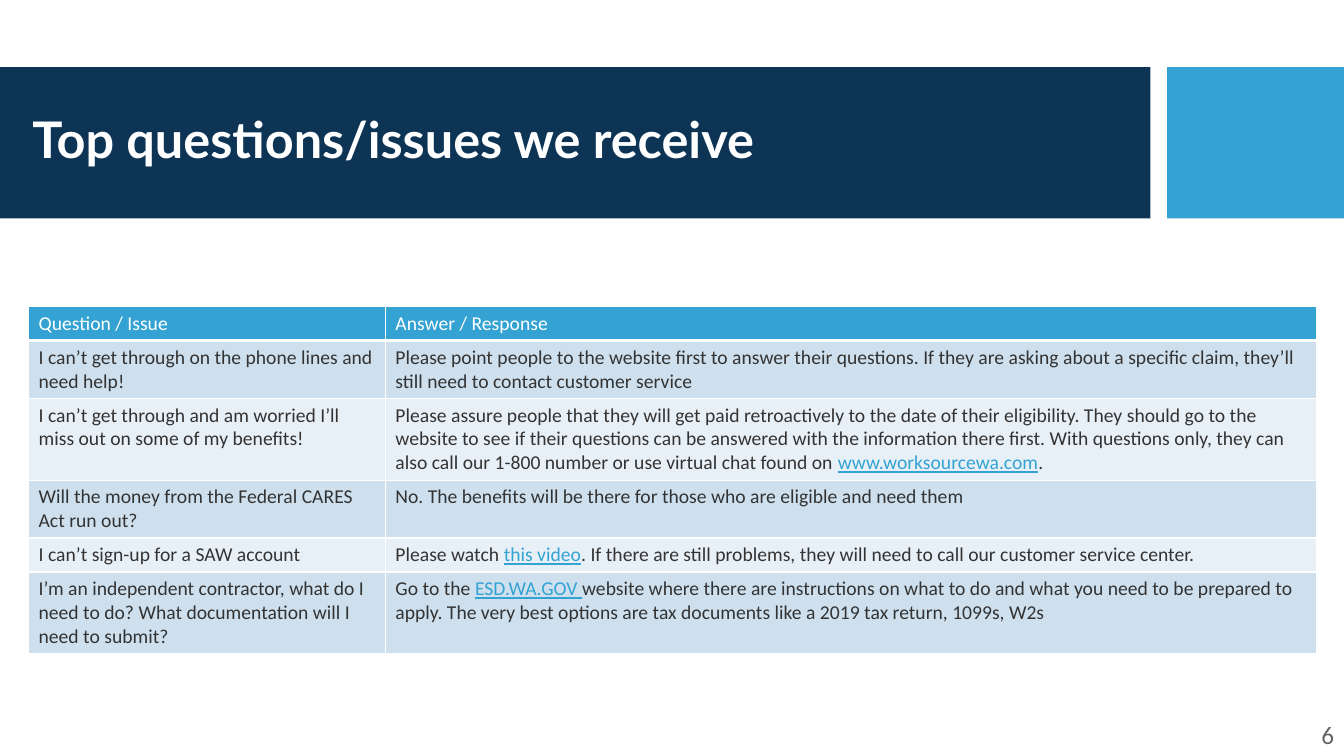
from lxml.etree import SubElement
from pptx import Presentation
from pptx.dml.color import RGBColor
from pptx.enum.shapes import MSO_SHAPE as Shape
from pptx.enum.text import MSO_ANCHOR as Anchor, PP_ALIGN as Align
from pptx.oxml.ns import qn
from pptx.util import Pt

NAVY = RGBColor(0x0D, 0x34, 0x55)
BLUE = RGBColor(0x34, 0xA2, 0xD2)
LINK = RGBColor(0x32, 0xA3, 0xD3)
BAND_DARK = RGBColor(0xCE, 0xE0, 0xEE)
BAND_LIGHT = RGBColor(0xE8, 0xF0, 0xF7)
INK = RGBColor(0x33, 0x33, 0x33)
GREY = RGBColor(0x66, 0x66, 0x66)
WHITE = RGBColor(0xFF, 0xFF, 0xFF)

COLUMN_WIDTHS = (254.9, 665.2)
ROW_HEIGHTS = (24.3, 41.3, 58.4, 41.3, 24.3, 58.4)
LINKED = ("www.worksourcewa.com", "this video", "ESD.WA.GOV ")
ROWS = (
    (("Question / Issue",), ("Answer / Response",)),
    (("I can’t get through on the phone lines and need help!",),
     ("Please point people to the website first to answer their questions. If they are "
      "asking about a specific claim, they’ll still need to contact customer service",)),
    (("I can’t get through and am worried I’ll miss out on some of my benefits!",),
     ("Please assure people that they will get paid retroactively to the date of their "
      "eligibility. They should go to the website to see if their questions can be answered "
      "with the information there first. With questions only, they can also call our 1-800 "
      "number or use virtual chat found on ", "www.worksourcewa.com", ".")),
    (("Will the money from the Federal CARES Act run out?",),
     ("No. The benefits will be there for those who are eligible and need them",)),
    (("I can’t sign-up for a SAW account",),
     ("Please watch ", "this video", ". If there are still problems, they will need to call "
      "our customer service center.")),
    (("I’m an independent contractor, what do I need to do? What documentation will I need "
      "to submit?",),
     ("Go to the ", "ESD.WA.GOV ", "website where there are instructions on what to do and "
      "what you need to be prepared to apply. The very best options are tax documents like a "
      "2019 tax return, 1099s, W2s")),
)


class PageBuilder:
    heading_font = "Lato"
    body_font = "Calibri"

    def __init__(self, deck):
        self.page = deck.slides.add_slide(deck.slide_layouts[5])

    def style(self, span, font, size, color, bold=False):
        span.font.name = font
        span.font.size = Pt(size)
        span.font.color.rgb = color
        span.font.bold = bold

    def block(self, left, top, width, height, color):
        shape = self.page.shapes.add_shape(
            Shape.RECTANGLE, Pt(left), Pt(top), Pt(width), Pt(height))
        shape.shadow.inherit = False
        shape.fill.solid()
        shape.fill.fore_color.rgb = color
        shape.line.fill.background()

    def title(self, text, left, top, width, height):
        box = self.page.shapes.title
        box.left, box.top, box.width, box.height = Pt(left), Pt(top), Pt(width), Pt(height)
        self.page.shapes._spTree.append(box._element)
        frame = box.text_frame
        frame.text = text
        frame.vertical_anchor = Anchor.MIDDLE
        para = frame.paragraphs[0]
        para.alignment = Align.LEFT
        para.line_spacing = 0.9
        self.style(para.runs[0], self.heading_font, 36, WHITE, bold=True)

    def page_number(self, text, left, top, width, height):
        box = self.page.shapes.add_textbox(Pt(left), Pt(top), Pt(width), Pt(height))
        box.text_frame.word_wrap = True
        box.text_frame.text = text
        para = box.text_frame.paragraphs[0]
        para.alignment = Align.RIGHT
        self.style(para.runs[0], self.body_font, 18, GREY)

    def borders(self, cell, bottom):
        properties = cell._tc.get_or_add_tcPr()
        for side, width in (("L", 1), ("R", 1), ("T", 1), ("B", bottom)):
            line = SubElement(properties, qn(f"a:ln{side}"), w=str(Pt(width)))
            fill = SubElement(line, qn("a:solidFill"))
            SubElement(fill, qn("a:srgbClr"), val=str(WHITE))

    def cell(self, cell, parts, fill, color, bottom):
        self.borders(cell, bottom)
        cell.fill.solid()
        cell.fill.fore_color.rgb = fill
        para = cell.text_frame.paragraphs[0]
        for part in parts:
            span = para.add_run()
            span.text = part
            linked = part in LINKED
            self.style(span, self.body_font, 14, LINK if linked else color)
            span.font.underline = linked

    def table(self, rows, left, top, widths, heights):
        table = self.page.shapes.add_table(
            len(rows), len(widths), Pt(left), Pt(top), Pt(sum(widths)), Pt(sum(heights))).table
        for column, width in zip(table.columns, widths):
            column.width = Pt(width)
        for index, (row, height) in enumerate(zip(rows, heights)):
            table.rows[index].height = Pt(height)
            if index == 0:
                fill, color, bottom = BLUE, WHITE, 3
            else:
                fill, color, bottom = (BAND_LIGHT, BAND_DARK)[index % 2], INK, 1
            for column, parts in enumerate(row):
                self.cell(table.cell(index, column), parts, fill, color, bottom)


def main():
    deck = Presentation()
    deck.slide_width, deck.slide_height = Pt(960), Pt(540)
    builder = PageBuilder(deck)
    builder.block(0, 48, 821.8, 108, NAVY)
    builder.block(833.6, 48, 126.4, 108, BLUE)
    builder.title("Top questions/issues we receive", 16, 59, 795, 85)
    builder.table(ROWS, 20.4, 219, COLUMN_WIDTHS, ROW_HEIGHTS)
    builder.page_number("6", 908.8, 510.5, 51.2, 29.5)
    deck.save("out.pptx")


if __name__ == "__main__":
    main()
